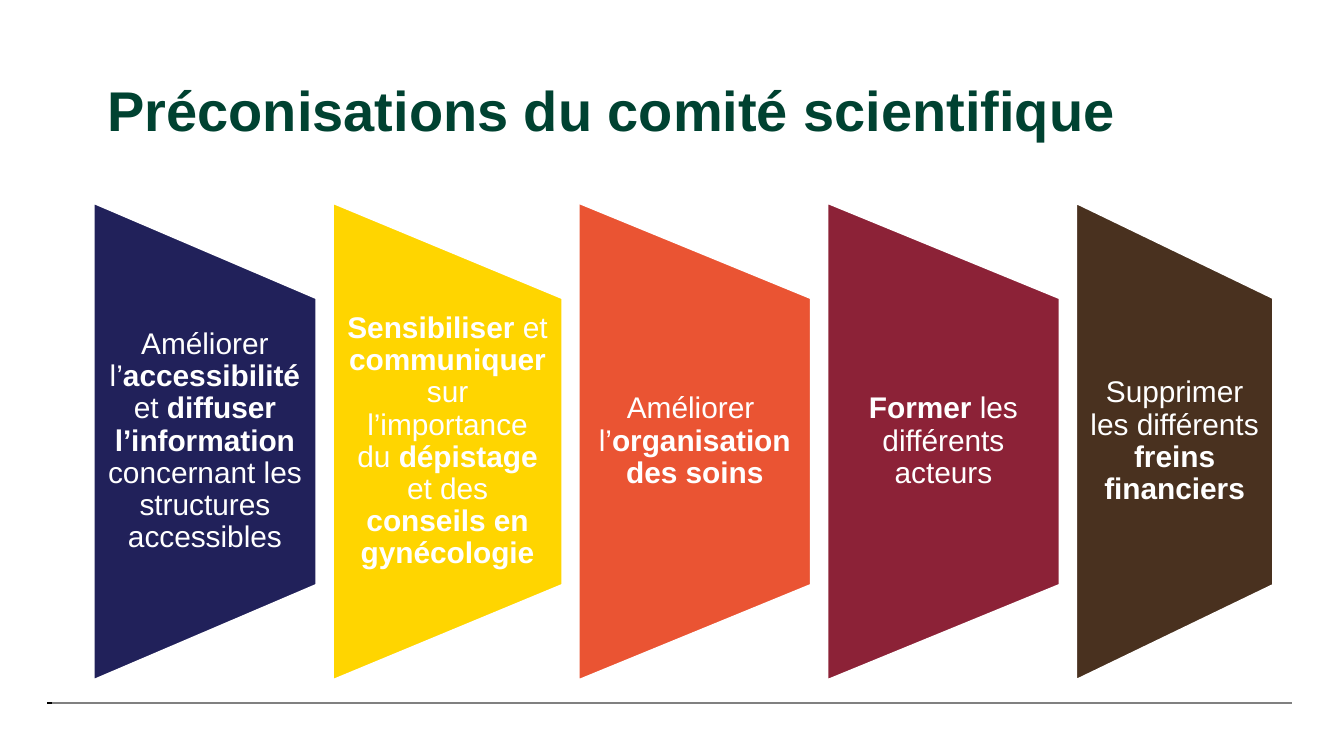
from lxml.etree import SubElement
from pptx import Presentation
from pptx.dml.color import RGBColor
from pptx.enum.shapes import MSO_CONNECTOR, MSO_SHAPE
from pptx.enum.text import MSO_ANCHOR, PP_ALIGN
from pptx.oxml.ns import qn
from pptx.util import Inches, Pt

WHITE = RGBColor(0xFF, 0xFF, 0xFF)
BLACK = RGBColor(0x00, 0x00, 0x00)
GREY = RGBColor(0x80, 0x80, 0x80)
GREEN = RGBColor(0x00, 0x42, 0x31)
NAVY = RGBColor(0x21, 0x21, 0x5A)
YELLOW = RGBColor(0xFF, 0xD5, 0x00)
ORANGE = RGBColor(0xEA, 0x54, 0x33)
BURGUNDY = RGBColor(0x8C, 0x22, 0x37)
BROWN = RGBColor(0x49, 0x31, 0x1F)

FONT = "Arial"
PANEL_GAP = Inches(0.11)

RECOMMENDATIONS = [
    (1.67, NAVY, [[("Améliorer l’", False), ("accessibilité", True), (" et ", False),
                   ("diffuser l’information", True),
                   (" concernant les structures accessibles", False)]]),
    (1.72, YELLOW, [[("Sensibiliser", True), (" et ", False), ("communiquer", True),
                     (" sur l’importance du ", False), ("dépistage", True),
                     (" et des ", False), ("conseils en gynécologie", True)]]),
    (1.74, ORANGE, [[("Améliorer ", False)],
                    [("l’", False), ("organisation des soins", True)]]),
    (1.74, BURGUNDY, [[("Former", True), (" les différents acteurs", False)]]),
    (1.48, BROWN, [[("Supprimer les différents ", False)],
                   [("freins financiers", True)]]),
]


def add_text(slide, left, top, width, height, paragraphs, size, color, align, margins):
    frame = slide.shapes.add_textbox(left, top, width, height).text_frame
    frame.word_wrap = True
    frame.vertical_anchor = MSO_ANCHOR.MIDDLE
    frame.margin_left, frame.margin_right = margins
    frame.margin_top = frame.margin_bottom = 0
    for index, runs in enumerate(paragraphs):
        paragraph = frame.add_paragraph() if index else frame.paragraphs[0]
        paragraph.alignment = align
        paragraph.line_spacing = 0.9
        for text, bold in runs:
            run = paragraph.add_run()
            run.text = text
            run.font.name = FONT
            run.font.size = size
            run.font.bold = bold
            run.font.color.rgb = color


def add_title(slide, left, top, width, height):
    add_text(slide, left, top, width, height,
             [[("Préconisations du comité scientifique", True)]],
             Pt(30), GREEN, PP_ALIGN.LEFT, (Inches(0.11), Inches(0.1)))


def add_panel(slide, left, top, width, height, color, paragraphs):
    trapezoid = slide.shapes.add_shape(
        MSO_SHAPE.FLOWCHART_MANUAL_OPERATION,
        left + (width - height) // 2, top + (height - width) // 2, height, width)
    trapezoid.rotation = 270
    trapezoid.shadow.inherit = False
    trapezoid.fill.solid()
    trapezoid.fill.fore_color.rgb = color
    trapezoid.line.color.rgb = WHITE
    trapezoid.line.width = Pt(2)
    add_text(slide, left, top + height // 5, width, height * 3 // 5, paragraphs,
             Pt(16), WHITE, PP_ALIGN.CENTER, (Inches(0.11), Inches(0.11)))


def add_recommendations(slide, left, top, height):
    for width, color, paragraphs in RECOMMENDATIONS:
        panel_width = Inches(width)
        add_panel(slide, left, top, panel_width, height, color, paragraphs)
        left += panel_width + PANEL_GAP


def add_footer_rules(slide, left, top, width):
    for offset, color in ((0, BLACK), (Inches(0.04), GREY)):
        rule = slide.shapes.add_connector(
            MSO_CONNECTOR.STRAIGHT, left + offset, top, left + offset + width, top)
        rule.line.color.rgb = color
        rule.line.width = Pt(0.8)
        SubElement(rule._element.spPr, qn("a:effectLst"))


def main():
    presentation = Presentation()
    presentation.slide_width = Inches(10)
    presentation.slide_height = presentation.slide_width * 9 // 16
    slide = presentation.slides.add_slide(presentation.slide_layouts[6])
    add_footer_rules(slide, Inches(0.35), Inches(5.23), Inches(9.22))
    add_title(slide, Inches(0.69), Inches(0.3), Inches(8.62), Inches(1.09))
    add_recommendations(slide, Inches(0.69), Inches(1.5), Inches(3.57))
    presentation.save("out.pptx")


if __name__ == "__main__":
    main()
